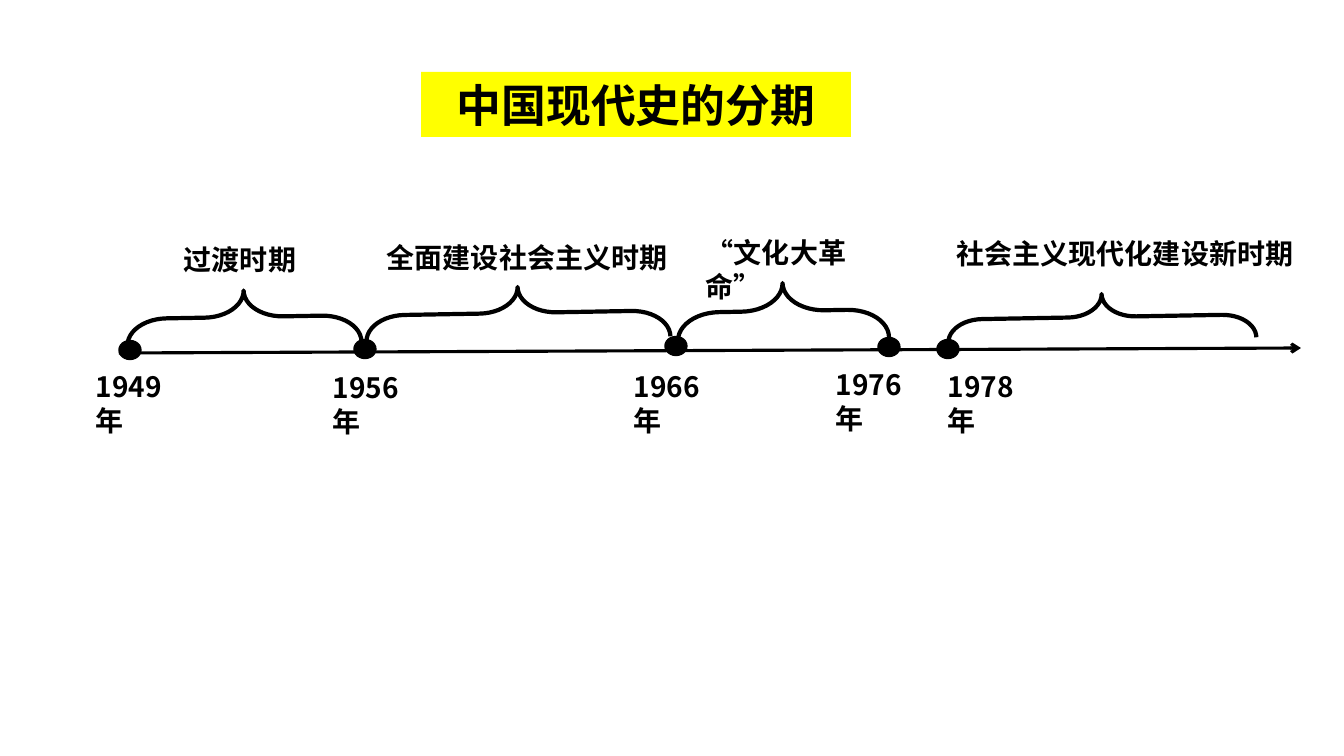
from lxml import etree
from pptx import Presentation
from pptx.dml.color import RGBColor
from pptx.enum.shapes import MSO_CONNECTOR, MSO_SHAPE
from pptx.enum.text import MSO_ANCHOR, MSO_AUTO_SIZE, PP_ALIGN
from pptx.oxml.ns import qn
from pptx.util import Emu, Pt

BLACK = RGBColor(0, 0, 0)
YELLOW = RGBColor(255, 255, 0)
CHINESE_FONT = "Noto Sans CJK SC"
QUOTE_FONT = "Arial"
PAGE_WIDTH, PAGE_HEIGHT = 1344, 756
DOT_WIDTH, DOT_HEIGHT = 22, 19
LABEL_HEIGHT = 44

# Year, dot centre, label corner
MILESTONES = [
    ("1949年", (130, 350), (86, 365)),
    ("1956年", (365, 349), (323, 366)),
    ("1966年", (676, 346), (624, 365)),
    ("1976年", (889, 347), (826, 363)),
    ("1978年", (948, 349), (938, 365)),
]

# Runs of the name, label corner and width, brace centre, brace length and depth
PERIODS = [
    (["过渡时期"], (174, 238, 140), (244, 317), (234, 53)),
    (["全面建设社会主义时期"], (377, 236, 310), (518, 313), (304, 52)),
    (["“", "文化大革命", "”"], (696, 231, 206), (783, 311), (211, 56)),
    (["社会主义现代化建设新时期"], (937, 232, 376), (1102, 317), (308, 46)),
]


def px(length):
    return Emu(round(length * 914400 / 100.8))


def write_text(shape, pieces, size, alignment=PP_ALIGN.LEFT):
    frame = shape.text_frame
    frame.word_wrap = True
    frame.auto_size = MSO_AUTO_SIZE.SHAPE_TO_FIT_TEXT
    para = frame.paragraphs[0]
    para.alignment = alignment
    for piece in pieces:
        span = para.add_run()
        span.text = piece
        span.font.name = QUOTE_FONT if piece in "“”" else CHINESE_FONT
        span.font.size = Pt(size)
        span.font.bold = True
        span.font.color.rgb = BLACK
        east_asian = etree.SubElement(span.font._element, qn("a:ea"))
        east_asian.set("typeface", CHINESE_FONT)


def add_label(page, box, pieces, alignment=PP_ALIGN.LEFT):
    label = page.shapes.add_textbox(*map(px, box))
    write_text(label, pieces, 20, alignment)


def add_title(page, box, title):
    banner = page.shapes.add_shape(MSO_SHAPE.RECTANGLE, *map(px, box))
    banner.shadow.inherit = False
    banner.fill.solid()
    banner.fill.fore_color.rgb = YELLOW
    banner.line.fill.background()
    banner.text_frame.vertical_anchor = MSO_ANCHOR.MIDDLE
    write_text(banner, [title], 32, PP_ALIGN.CENTER)


def add_time_axis(page, start, end):
    axis = page.shapes.add_connector(
        MSO_CONNECTOR.STRAIGHT, *map(px, (*start, *end)))
    axis.line.color.rgb = BLACK
    axis.line.width = Pt(2.25)
    arrowhead = etree.SubElement(axis.line._get_or_add_ln(), qn("a:tailEnd"))
    arrowhead.set("type", "arrow")
    etree.SubElement(axis._element.spPr, qn("a:effectLst"))


def add_milestone(page, year, centre, label_corner):
    x, y = centre
    dot = page.shapes.add_shape(
        MSO_SHAPE.OVAL, px(x - DOT_WIDTH / 2), px(y - DOT_HEIGHT / 2),
        px(DOT_WIDTH), px(DOT_HEIGHT))
    dot.shadow.inherit = False
    dot.fill.solid()
    dot.fill.fore_color.rgb = BLACK
    dot.line.color.rgb = BLACK
    dot.line.width = Pt(1)
    add_label(page, (*label_corner, 105, LABEL_HEIGHT), [year])


def add_period(page, name, label_place, centre, brace_size):
    """Name a period above a left brace turned so that its tip points up."""
    x, y = centre
    length, depth = brace_size
    brace = page.shapes.add_shape(
        MSO_SHAPE.LEFT_BRACE, px(x - depth / 2), px(y - length / 2),
        px(depth), px(length))
    brace.rotation = 89
    brace.adjustments[0] = 0.742
    brace.adjustments[1] = 0.5
    brace.shadow.inherit = False
    brace.fill.background()
    brace.line.color.rgb = BLACK
    brace.line.width = Pt(3)
    is_last = name == PERIODS[-1][0]
    add_label(page, (*label_place, LABEL_HEIGHT), name,
              PP_ALIGN.CENTER if is_last else PP_ALIGN.LEFT)


def main():
    deck = Presentation()
    deck.slide_width, deck.slide_height = px(PAGE_WIDTH), px(PAGE_HEIGHT)
    page = deck.slides.add_slide(deck.slide_layouts[6])
    add_title(page, (421, 72, 430, 65), "中国现代史的分期")
    add_time_axis(page, (119, 353), (1301, 348))
    for milestone in MILESTONES:
        add_milestone(page, *milestone)
    for period in PERIODS:
        add_period(page, *period)
    deck.save("out.pptx")


if __name__ == "__main__":
    main()
